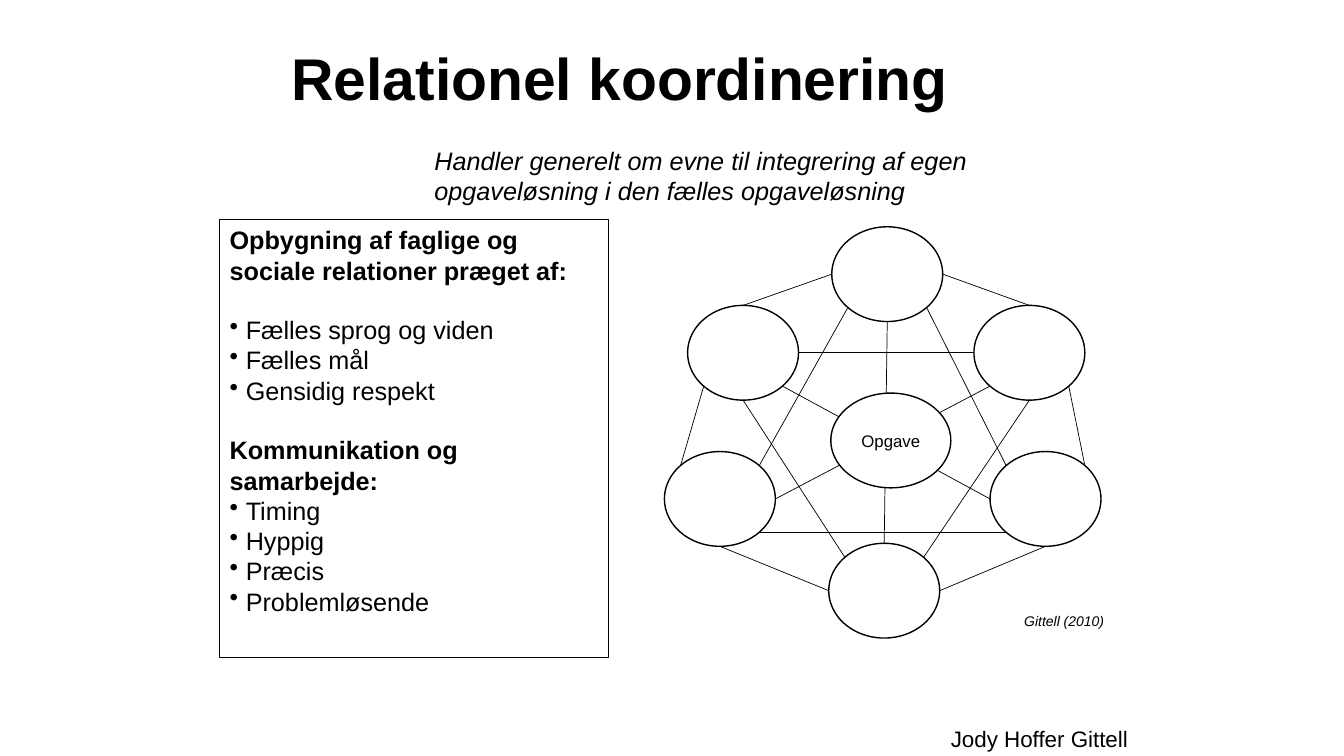
from lxml.etree import SubElement as Sub
from pptx import Presentation
from pptx.dml.color import RGBColor as RGB
from pptx.enum.shapes import MSO_CONNECTOR as LINE, MSO_SHAPE as KIND
from pptx.enum.text import MSO_ANCHOR as ANCHOR, PP_ALIGN as ALIGN
from pptx.oxml.ns import qn
from pptx.util import Pt

PX = 9144  # 100 px to the inch
INK = {"black": "000000", "white": "FFFFFF"}
BLACK = RGB.from_string(INK["black"])
WHITE = RGB.from_string(INK["white"])

deck = Presentation()
deck.slide_width, deck.slide_height = 1333 * PX, 750 * PX
slide = deck.slides.add_slide(deck.slide_layouts[5])
shapes = slide.shapes


def write(para, text, size, bold=False, italic=False):
    para.text = text
    font = para.font
    font.name, font.size = "Arial", Pt(size)
    font.bold, font.italic = bold, italic
    font.color.rgb = BLACK


def draw(kind, box, width):
    shape = shapes.add_shape(kind, *[n * PX for n in box])
    shape.shadow.inherit = False
    shape.fill.background()
    shape.line.color.rgb = BLACK
    shape.line.width = Pt(width)
    return shape


# Title
title = shapes.title
title.left, title.top, title.width, title.height = [n * PX for n in (289, 50, 1001, 137)]
frame = title.text_frame
frame.margin_left = frame.margin_top = frame.margin_right = frame.margin_bottom = 0
frame.vertical_anchor = ANCHOR.TOP
frame.word_wrap = True
para = frame.paragraphs[0]
write(para, "Relationel koordinering", 42, bold=True)
para.alignment = ALIGN.LEFT
para.line_spacing = 0.89

# Outer circles
WIDE, HIGH = 110, 94
spots = {"NW": (682, 303), "SW": (659, 448), "S": (822, 539),
         "SE": (982, 448), "NE": (966, 303), "N": (825, 225)}
for x, y in spots.values():
    draw(KIND.OVAL, (x, y, WIDE, HIGH), 1)

# Lines between points on the circles, as shares of width and height
LOW, TOP = 0.146, 0.854
sites = {"t": (0.5, 0), "tl": (LOW, LOW), "l": (0, 0.5), "bl": (LOW, TOP),
         "b": (0.5, 1), "br": (TOP, TOP), "r": (1, 0.5), "tr": (TOP, LOW)}
links = ["NW t N l", "NW r NE l", "NW br SE l", "NW b S tl", "NW bl SW tl",
         "N bl SW tr", "N b S t", "N br SE tl", "N r NE t", "NE bl SW r",
         "NE b S tr", "NE br SE tr", "SE bl SW br", "SE b S r", "S l SW b"]
for link in links:
    a, p, b, q = link.split()
    ends = []
    for node, site in ((a, p), (b, q)):
        (x, y), (u, v) = spots[node], sites[site]
        ends += [round(x + u * WIDE) * PX, round(y + v * HIGH) * PX]
    line = shapes.add_connector(LINE.STRAIGHT, *ends)
    line.line.color.rgb = BLACK
    line.line.width = Pt(0.5)
    Sub(line._element.spPr, qn("a:effectLst"))

# Task in the centre
task = draw(KIND.OVAL, (824, 390, 119, 94), 1)
task.fill.solid()
task.fill.fore_color.rgb = WHITE
task.text_frame.vertical_anchor = ANCHOR.MIDDLE
para = task.text_frame.paragraphs[0]
write(para, "Opgave", 12)
para.alignment = ALIGN.CENTER

# Panel with headings and bullets
groups = [
    ("Opbygning af faglige og sociale relationer præget af:", 21,
     ["Fælles sprog og viden", "Fælles mål", "Gensidig respekt"]),
    ("Kommunikation og samarbejde:", 0,
     ["Timing", "Hyppig", "Præcis", "Problemløsende"]),
]
panel = draw(KIND.RECTANGLE, (218, 218, 386, 434), 0.75)
frame = panel.text_frame
frame.word_wrap = True
frame.vertical_anchor = ANCHOR.TOP
para = frame.paragraphs[0]
for head, gap, items in groups:
    if para.text:
        para = frame.add_paragraph()
        para.space_before = Pt(21)
    write(para, head, 18, bold=True)
    para.alignment = ALIGN.LEFT
    para.space_after = Pt(gap)
    for item in items:
        para = frame.add_paragraph()
        write(para, item, 18)
        para.alignment = ALIGN.LEFT
        props = para._p.get_or_add_pPr()
        props.set("marL", str(16 * PX))
        props.set("indent", str(-16 * PX))
        mark = Sub(props, qn("a:buChar"))
        mark.set("char", "•")
        props.insert_element_before(mark, "a:tabLst", "a:defRPr", "a:extLst")

# Subtitle, source and author
notes = [
    ("Handler generelt om evne til integrering af egen opgaveløsning i den fælles opgaveløsning",
     (421, 139, 585, 71), 18, True, True),
    ("Gittell (2010)", (1006, 603, 101, 27), 10, True, True),
    ("Jody Hoffer Gittell", (943, 719, 178, 27), 16, False, False),
]
for text, box, size, slant, inset in notes:
    frame = shapes.add_textbox(*[n * PX for n in box]).text_frame
    frame.word_wrap = inset
    if not inset:
        frame.margin_left = frame.margin_top = frame.margin_right = frame.margin_bottom = 0
    write(frame.paragraphs[0], text, size, italic=slant)

deck.save("out.pptx")
